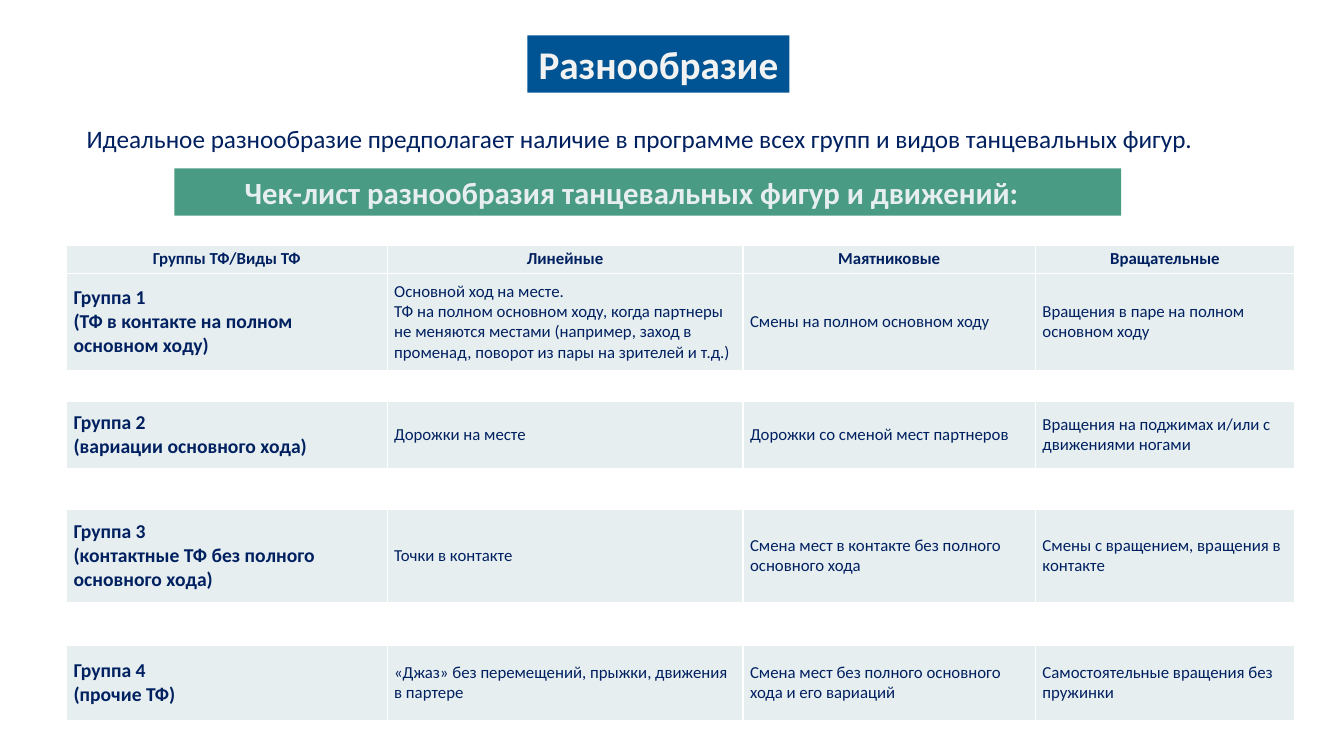
import pptx
import pptx.util
import pptx.dml.color
import pptx.enum.shapes
import pptx.enum.text
import pptx.oxml

Inches = pptx.util.Inches
Pt = pptx.util.Pt
CENTER = pptx.enum.text.PP_ALIGN.CENTER
LEFT = pptx.enum.text.PP_ALIGN.LEFT
MIDDLE = pptx.enum.text.MSO_ANCHOR.MIDDLE

NAVY, PALE, BLUE, GREEN = "002060", "E6EEF0", "005493", "4A9B83"
COLUMNS = [3.18, 3.53, 2.9, 2.57]
HEADER = ["Группы ТФ/Виды ТФ", "Линейные", "Маятниковые", "Вращательные"]
HEADER_HEIGHT = 0.28

# top, row height, group name and scope, then one list of lines per kind of figure
GROUPS = [
    (2.71, 0.97, ["Группа 1", "(ТФ в контакте на полном основном ходу)"],
     ["Основной ход на месте.",
      "ТФ на полном основном ходу, когда партнеры не меняются местами "
      "(например, заход в променад, поворот из пары на зрителей и т.д.)"],
     ["Смены на полном основном ходу"],
     ["Вращения в паре на полном основном ходу"]),
    (3.98, 0.67, ["Группа 2", "(вариации основного хода)"],
     ["Дорожки на месте"],
     ["Дорожки со сменой мест партнеров"],
     ["Вращения на поджимах и/или с движениями ногами"]),
    (5.05, 0.93, ["Группа 3", "(контактные ТФ без полного основного хода)"],
     ["Точки в контакте"],
     ["Смена мест в контакте без полного основного хода"],
     ["Смены с вращением, вращения в контакте"]),
    (6.4, 0.75, ["Группа 4", "(прочие ТФ)"],
     ["«Джаз» без перемещений, прыжки, движения в партере"],
     ["Смена мест без полного основного хода и его вариаций"],
     ["Самостоятельные вращения без пружинки"]),
]


def rgb(color):
    return pptx.dml.color.RGBColor.from_string(color)


class Deck:
    """Holds the text style and the current slide."""

    def __init__(self, s, font="Calibri"):
        self.s = s
        self.font = font

    def add_lines(self, tf, lines, size, color=NAVY, bold=False, align=LEFT):
        for i, line in enumerate(lines):
            p = tf.paragraphs[0] if i == 0 else tf.add_paragraph()
            p.alignment = align
            r = p.add_run()
            r.text = line
            r.font.name = self.font
            r.font.size = Pt(size)
            r.font.bold = bold
            r.font.color.rgb = rgb(color)

    def title(self, text, x, y, w, h):
        sp = self.s.shapes.title
        sp.left, sp.top, sp.width, sp.height = map(Inches, (x, y, w, h))
        sp.fill.solid()
        sp.fill.fore_color.rgb = rgb(BLUE)
        tf = sp.text_frame
        tf.auto_size = pptx.enum.text.MSO_AUTO_SIZE.NONE
        tf.word_wrap = False
        tf.vertical_anchor = MIDDLE
        self.add_lines(tf, [text], 28, "F2F2F2", True, CENTER)

    def text(self, text, x, y, w, h):
        sp = self.s.shapes.add_textbox(*map(Inches, (x, y, w, h)))
        sp.text_frame.word_wrap = True
        self.add_lines(sp.text_frame, [text], 18)

    def banner(self, text, x, y, w, h):
        sp = self.s.shapes.add_shape(
            pptx.enum.shapes.MSO_SHAPE.RECTANGLE, *map(Inches, (x, y, w, h)))
        sp.shadow.inherit = False
        sp.fill.solid()
        sp.fill.fore_color.rgb = rgb(GREEN)
        sp.line.fill.background()
        tf = sp.text_frame
        tf.word_wrap = True
        tf.vertical_anchor = MIDDLE
        tf.margin_right = Inches(0.42)
        self.add_lines(tf, [text], 22, PALE, True, CENTER)

    def cell(self, cell, lines, size, bold, align=LEFT):
        cell.fill.solid()
        cell.fill.fore_color.rgb = rgb(PALE)
        cell.vertical_anchor = MIDDLE
        cell.margin_left = cell.margin_right = Inches(0.07)
        cell.margin_top = cell.margin_bottom = 0
        self.add_lines(cell.text_frame, lines, size, bold=bold, align=align)
        pr = cell._tc.get_or_add_tcPr()
        for i, side in enumerate(("lnL", "lnR", "lnT", "lnB")):
            ln = pptx.oxml.parse_xml(
                f'<a:{side} xmlns:a="http://schemas.openxmlformats.org/drawingml/2006/main" '
                f'w="{Pt(1)}"><a:solidFill><a:srgbClr val="FFFFFF"/></a:solidFill></a:{side}>')
            pr.insert(i, ln)

    def table(self, y, heights):
        tbl = self.s.shapes.add_table(
            len(heights), len(COLUMNS), Inches(0.66), Inches(y),
            Inches(sum(COLUMNS)), Inches(sum(heights))).table
        tbl.first_row = tbl.horz_banding = False
        for column, width in zip(tbl.columns, COLUMNS):
            column.width = Inches(width)
        for row, height in zip(tbl.rows, heights):
            row.height = Inches(height)
        return tbl

    def group(self, y, height, cells, header=None):
        """Draw one group as a table, under a header row if one is given."""
        if header:
            tbl = self.table(y - HEADER_HEIGHT, [HEADER_HEIGHT, height])
            for c, name in enumerate(header):
                self.cell(tbl.cell(0, c), [name], 12, True, CENTER)
        else:
            tbl = self.table(y, [height])
        last = len(tbl.rows) - 1
        for c, lines in enumerate(cells):
            self.cell(tbl.cell(last, c), lines, 14 if c == 0 else 12, c == 0)


def main():
    prs = pptx.Presentation()
    prs.slide_width, prs.slide_height = Inches(13.33), Inches(7.5)
    deck = Deck(prs.slides.add_slide(prs.slide_layouts[5]))
    deck.title("Разнообразие", 5.23, 0.35, 2.6, 0.57)
    deck.text("Идеальное разнообразие предполагает наличие в программе "
              "всех групп и видов танцевальных фигур.", 0.76, 1.17, 11.55, 0.4)
    for i, (y, height, *cells) in enumerate(GROUPS):
        deck.group(y, height, cells, HEADER if i == 0 else None)
    deck.banner("Чек-лист разнообразия танцевальных фигур и движений:",
                1.73, 1.67, 9.39, 0.47)
    prs.save("out.pptx")


if __name__ == "__main__":
    main()
